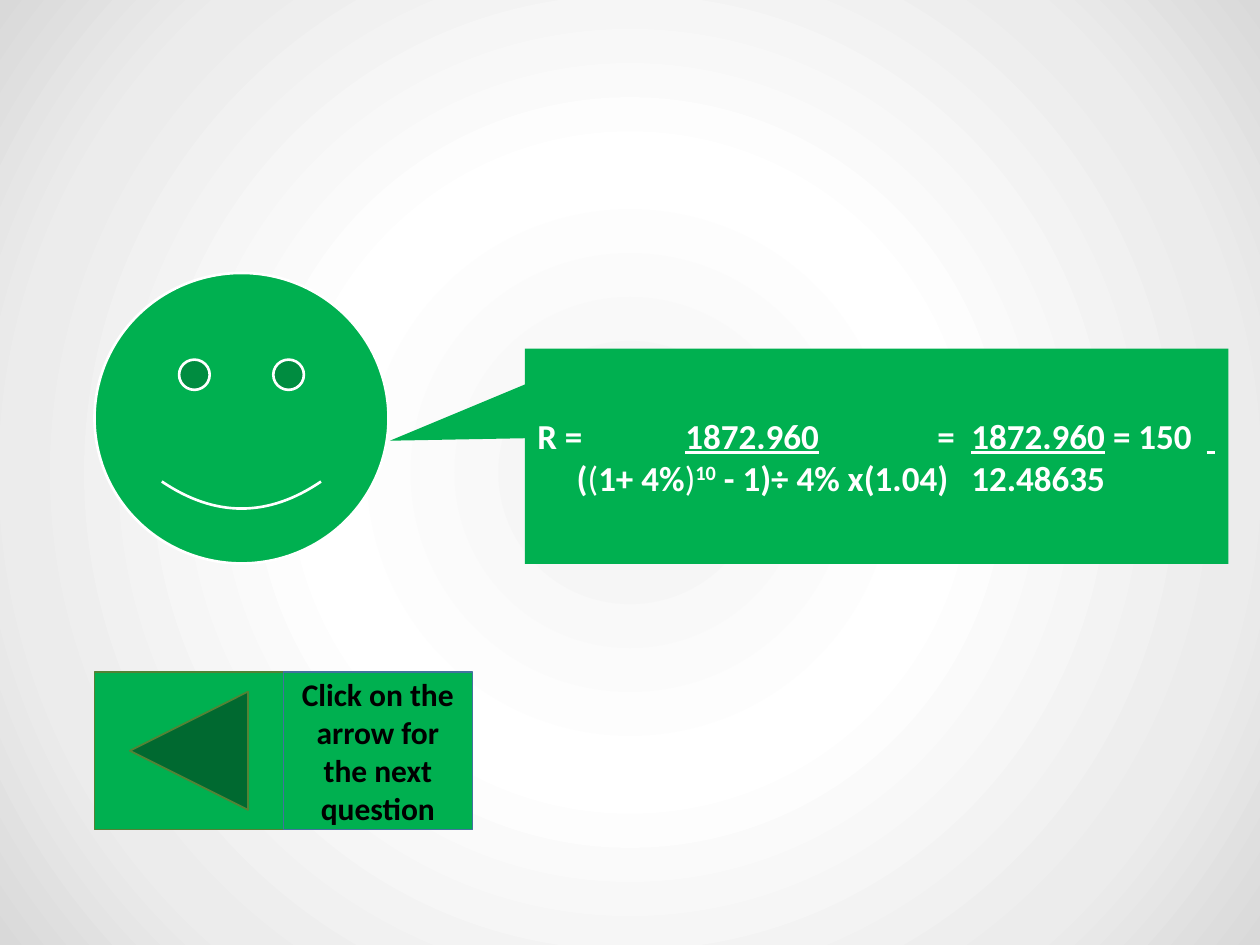
from lxml.etree import SubElement as Sub
from pptx import Presentation
from pptx.dml.color import RGBColor as Rgb
from pptx.enum.shapes import MSO_SHAPE as Kind
from pptx.enum.text import MSO_ANCHOR as Anchor, PP_ALIGN as Align
from pptx.oxml import parse_xml
from pptx.oxml.ns import qn
from pptx.util import Pt

HUE = {"green": "00B050", "white": "FFFFFF", "black": "000000",
       "olive": "548235", "blue": "43739E"}
STOPS = [(0, "F2F2F2"), (39, "FFFFFF"), (78, "ECECEC"), (100, "D9D9D9")]

deck = Presentation()
deck.slide_width, deck.slide_height = Pt(720), Pt(540)
slide = deck.slides.add_slide(deck.slide_layouts[6])

slide.background.fill.solid()
back = slide.background._cSld.find(qn("p:bg")).find(qn("p:bgPr"))
grads = "".join(f'<a:gs pos="{pos * 1000}"><a:srgbClr val="{hue}"/></a:gs>'
                for pos, hue in STOPS)
back.replace(back[0], parse_xml(
    '<a:gradFill xmlns:a="http://schemas.openxmlformats.org/drawingml/2006/main" '
    f'rotWithShape="1"><a:gsLst>{grads}</a:gsLst><a:path path="circle">'
    '<a:fillToRect l="50000" t="50000" r="50000" b="50000"/></a:path></a:gradFill>'))


def add_box(kind, spot, adj, edge, width):
    box = slide.shapes.add_shape(kind, *map(Pt, spot))
    box.shadow.inherit = False
    box.fill.solid()
    box.fill.fore_color.rgb = Rgb.from_string(HUE["green"])
    for i, val in enumerate(adj):
        box.adjustments[i] = val
    if edge:
        box.line.color.rgb = Rgb.from_string(HUE[edge])
        box.line.width = Pt(width)
    else:
        box.line.fill.background()
    box.text_frame.word_wrap = True
    box.text_frame.vertical_anchor = Anchor.MIDDLE
    return box


def add_run(para, text, size, hue, **form):
    run = para.add_run()
    run.text = text
    run.font.color.rgb = Rgb.from_string(HUE[hue])
    base = {"name": "Calibri", "size": Pt(size), "bold": True}
    for key, val in (base | form).items():
        setattr(run.font, key, val)
    return run


add_box(Kind.SMILEY_FACE, (54, 156, 168, 166), [0.047], "white", 1.5)
add_box(Kind.ACTION_BUTTON_BACK_OR_PREVIOUS, (54, 384, 108, 90), [], "olive", 1)
call = add_box(Kind.RECTANGULAR_CALLOUT, (300, 199.2, 402, 123),
               [-0.692, -0.072], None, 0)
hint = add_box(Kind.PENTAGON, (162, 384, 108, 90), [0], "blue", 1)
hint._element.spPr.get_or_add_xfrm().set("flipH", "1")

LINE, THIN = {"underline": True}, {"bold": False}
ROWS = [
    ([84.6, 228.6, 248, 382.5],
     [("R =", {}), ("\t1872.960\t", LINE), ("=\t", {}), ("1872.960", LINE),
      (" = 150\t", {}), (" ", LINE)]),
    ([22.5, 248],
     [("\t(", {}), ("(", THIN), ("1+ 4%", {}), (")", THIN), ("10", {"up": True}),
      (" - 1)÷ 4% x(1.04)\t12.48635", {})]),
]
frame = call.text_frame
for row, (tabs, parts) in enumerate(ROWS):
    para = frame.add_paragraph() if row else frame.paragraphs[0]
    para.alignment = Align.LEFT
    stops = Sub(para._p.get_or_add_pPr(), qn("a:tabLst"))
    for tab in tabs:
        Sub(stops, qn("a:tab"), pos=str(int(Pt(tab))), algn="l")
    for text, form in parts:
        form = dict(form)
        raised = form.pop("up", False)
        run = add_run(para, text, 20, "white", **form)
        if raised:
            run.font._element.set("baseline", "30000")

para = hint.text_frame.paragraphs[0]
para.alignment = Align.CENTER
add_run(para, "Click on the arrow for the next question", 18, "black")

deck.save("out.pptx")
